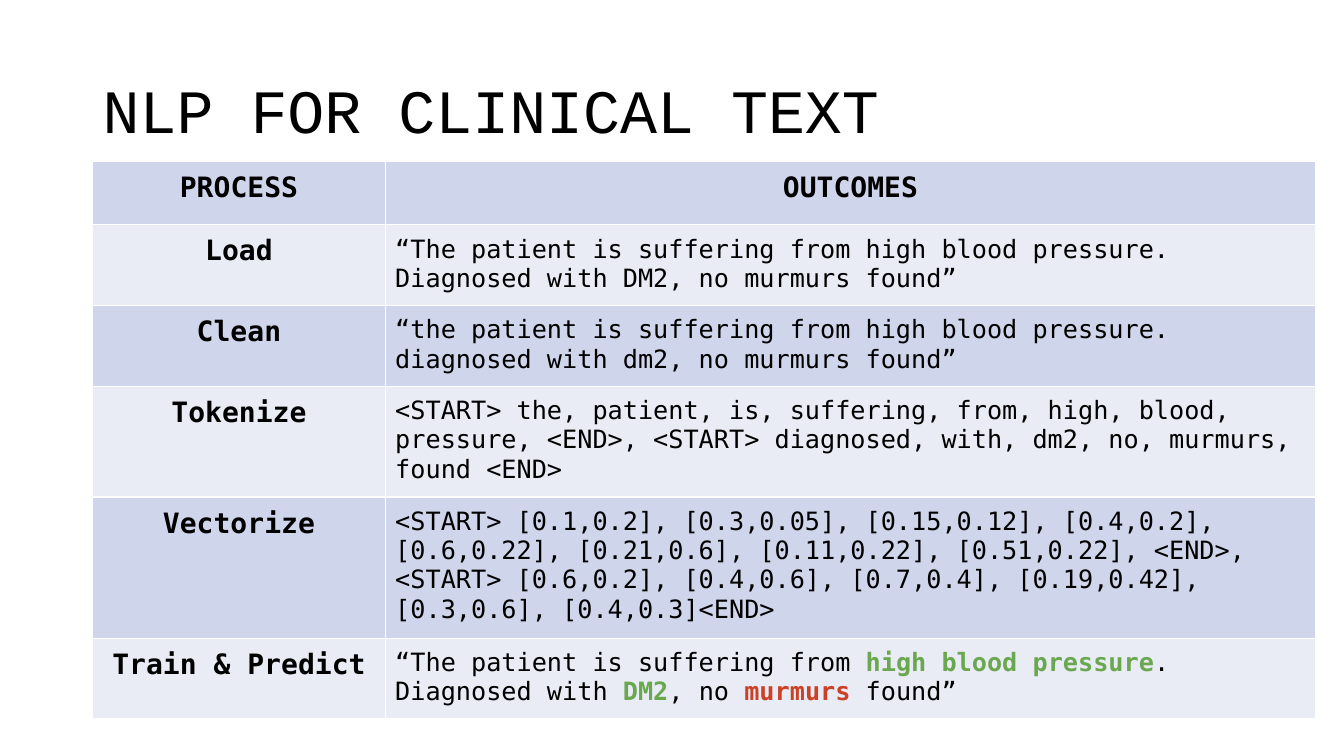
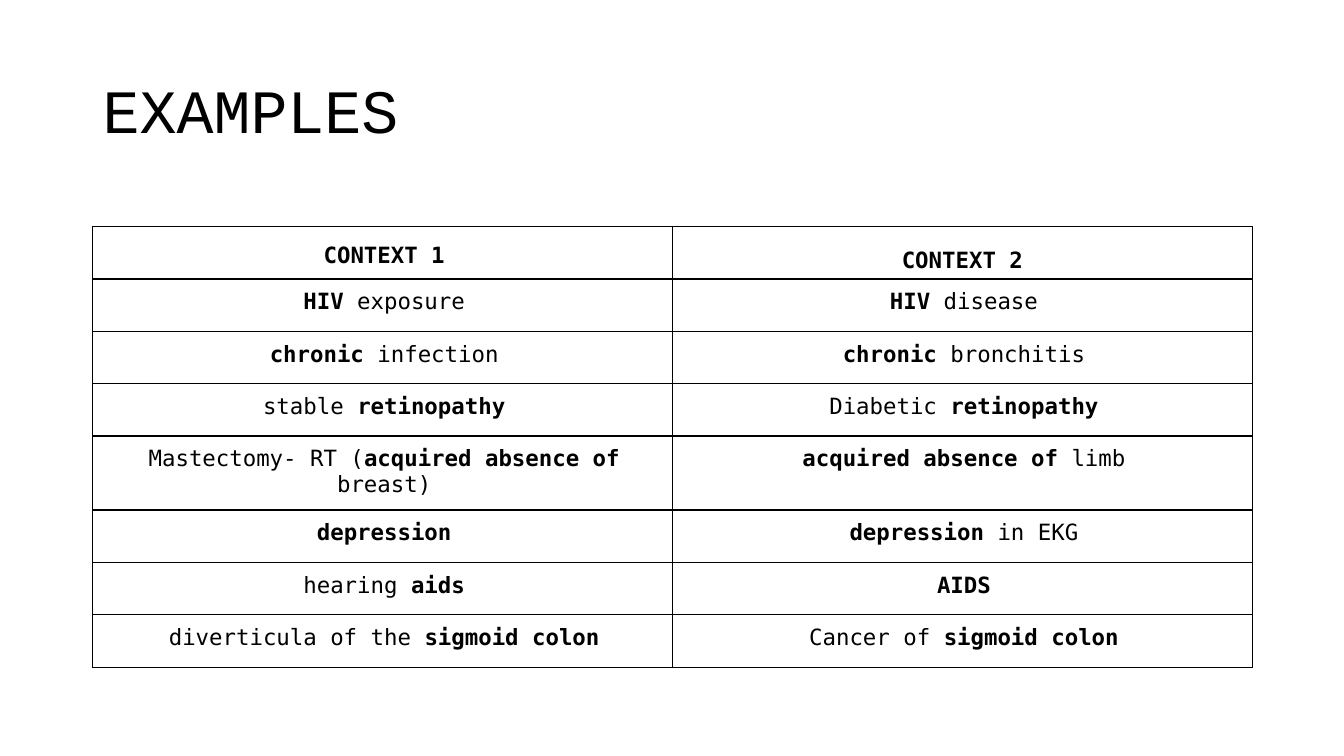
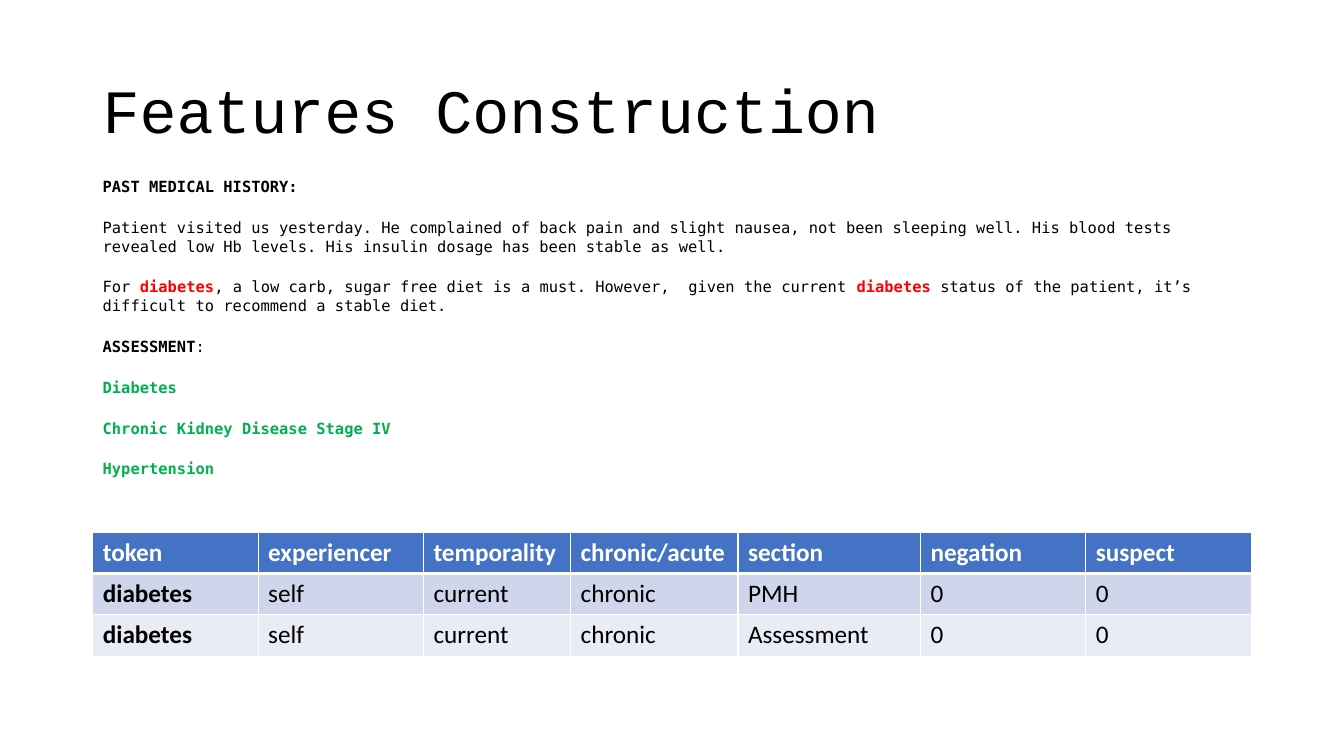
import dataclasses

import lxml.etree
import pptx
import pptx.dml.color
import pptx.enum.text
import pptx.oxml.ns
import pptx.util

Inches = pptx.util.Inches
Pt = pptx.util.Pt
Align = pptx.enum.text.PP_ALIGN
Anchor = pptx.enum.text.MSO_ANCHOR


@dataclasses.dataclass(frozen=True)
class Theme:
    black: str = "000000"
    white: str = "FFFFFF"
    header_blue: str = "4472C4"
    dark_band: str = "CFD5EA"
    light_band: str = "E9EBF5"
    found: str = "6AA84F"
    negated: str = "CC4125"
    mention: str = "FF0000"
    diagnosis: str = "00B050"
    title_font: str = "Courier New"
    text_font: str = "DejaVu Sans Mono"
    table_font: str = "Calibri"
    title_size: int = 44
    label_size: int = 20
    table_size: int = 18
    context_size: int = 16
    note_size: int = 11


THEME = Theme()


@dataclasses.dataclass(frozen=True)
class Box:
    left: float
    top: float
    width: float
    height: float

    def lengths(self):
        return [Inches(value) for value in dataclasses.astuple(self)]


@dataclasses.dataclass(frozen=True)
class Strong:
    """A bold stretch of text, optionally in its own colour."""
    text: str
    color: str = ""


@dataclasses.dataclass(frozen=True)
class CellStyle:
    """Margins run left, top, right, bottom."""
    size: int
    font: str = THEME.text_font
    color: str = THEME.black
    fill: str = ""
    align: Align = Align.LEFT
    anchor: Anchor = Anchor.TOP
    margins: tuple = (0.1, 0.1, 0.1, 0.1)
    space_before: int = 0
    border: str = THEME.white
    top_border: int = 1
    bottom_border: int = 1


TITLE_BOX = Box(0.92, 0.4, 11.5, 1.45)
PIPELINE_BOX = Box(0.92, 1.6, 12.13, 5.31)
CONTEXT_BOX = Box(0.92, 2.25, 11.5, 3.95)
NOTE_BOX = Box(0.92, 1.71, 11.5, 3.52)
FEATURE_BOX = Box(0.92, 5.28, 11.5, 1.23)

PIPELINE = [
    [[Strong("PROCESS")], [Strong("OUTCOMES")]],
    [[Strong("Load")],
     ["“The patient is suffering from high blood pressure. "
      "Diagnosed with DM2, no murmurs found”"]],
    [[Strong("Clean")],
     ["“the patient is suffering from high blood pressure. "
      "diagnosed with dm2, no murmurs found”"]],
    [[Strong("Tokenize")],
     ["<START> the, patient, is, suffering, from, high, blood, pressure, <END>, "
      "<START> diagnosed, with, dm2, no, murmurs, found <END>"]],
    [[Strong("Vectorize")],
     ["<START> [0.1,0.2], [0.3,0.05], [0.15,0.12], [0.4,0.2], [0.6,0.22], "
      "[0.21,0.6], [0.11,0.22], [0.51,0.22], <END>, <START> [0.6,0.2], "
      "[0.4,0.6], [0.7,0.4], [0.19,0.42], [0.3,0.6], [0.4,0.3]<END>"]],
    [[Strong("Train & Predict")],
     ["“The patient is suffering from ",
      Strong("high blood pressure", THEME.found), ". Diagnosed with ",
      Strong("DM2", THEME.found), ", no ",
      Strong("murmurs", THEME.negated), " found”"]],
]

CONTEXTS = [
    [[Strong("CONTEXT 1")], [Strong("CONTEXT 2")]],
    [[Strong("HIV"), " exposure"], [Strong("HIV"), " disease"]],
    [[Strong("chronic"), " infection"], [Strong("chronic"), " bronchitis"]],
    [["stable ", Strong("retinopathy")], ["Diabetic ", Strong("retinopathy")]],
    [["Mastectomy- RT (", Strong("acquired absence of"), " breast)"],
     [Strong("acquired absence of"), " limb"]],
    [[Strong("depression")], [Strong("depression "), "in EKG"]],
    [["hearing ", Strong("aids")], [Strong("AIDS")]],
    [["diverticula of the ", Strong("sigmoid colon")],
     ["Cancer of ", Strong("sigmoid colon")]],
]

NOTE = [
    [Strong("PAST MEDICAL HISTORY:")],
    ["Patient visited us yesterday. He complained of back pain and slight nausea, "
     "not been sleeping well. His blood tests revealed low Hb levels. "
     "His insulin dosage has been stable as well."],
    ["For ", Strong("diabetes", THEME.mention),
     ", a low carb, sugar free diet is a must. However,  given the current ",
     Strong("diabetes", THEME.mention),
     " status of the patient, it’s difficult to recommend a stable diet."],
    [Strong("ASSESSMENT"), ":"],
    [Strong("Diabetes", THEME.diagnosis)],
    [Strong("Chronic Kidney Disease Stage IV", THEME.diagnosis)],
    [Strong("Hypertension", THEME.diagnosis)],
]

FEATURE_NAMES = ["token", "experiencer", "temporality", "chronic/acute",
                 "section", "negation", "suspect"]
FEATURES = [[[Strong(name)] for name in FEATURE_NAMES]] + [
    [[Strong("diabetes")], ["self"], ["current"], ["chronic"], [section], ["0"], ["0"]]
    for section in ("PMH", "Assessment")
]


def rgb(color):
    return pptx.dml.color.RGBColor.from_string(color)


def write_paragraph(paragraph, parts, font, size, color):
    paragraph.font.name = font
    paragraph.font.size = Pt(size)
    paragraph.font.color.rgb = rgb(color)
    for part in parts:
        run = paragraph.add_run()
        if isinstance(part, Strong):
            run.text = part.text
            run.font.bold = True
            if part.color:
                run.font.color.rgb = rgb(part.color)
        else:
            run.text = part


def add_text(slide, box, paragraphs, font, size, anchor=Anchor.TOP, **spacing):
    """Add a text box; spacing names paragraph properties such as space_after."""
    frame = slide.shapes.add_textbox(*box.lengths()).text_frame
    frame.word_wrap = True
    frame.vertical_anchor = anchor
    for index, parts in enumerate(paragraphs):
        paragraph = frame.add_paragraph() if index else frame.paragraphs[0]
        write_paragraph(paragraph, parts, font, size, THEME.black)
        for name, value in spacing.items():
            setattr(paragraph, name, value)


def draw_borders(cell, style):
    properties = cell._tc.get_or_add_tcPr()
    widths = {"L": 1, "R": 1, "T": style.top_border, "B": style.bottom_border}
    for side, width in widths.items():
        line = lxml.etree.SubElement(
            properties, pptx.oxml.ns.qn("a:ln" + side), w=str(Pt(width)))
        fill = lxml.etree.SubElement(line, pptx.oxml.ns.qn("a:solidFill"))
        lxml.etree.SubElement(fill, pptx.oxml.ns.qn("a:srgbClr"), val=style.border)


def fill_cell(cell, parts, style):
    draw_borders(cell, style)
    if style.fill:
        cell.fill.solid()
        cell.fill.fore_color.rgb = rgb(style.fill)
    else:
        cell.fill.background()
    cell.vertical_anchor = style.anchor
    (cell.margin_left, cell.margin_top,
     cell.margin_right, cell.margin_bottom) = map(Inches, style.margins)
    paragraph = cell.text_frame.paragraphs[0]
    paragraph.alignment = style.align
    paragraph.space_before = Pt(style.space_before)
    write_paragraph(paragraph, parts, style.font, style.size, style.color)


def add_grid(slide, box, widths, heights, rows, style_for):
    """Add a table; style_for gives the CellStyle at a row and column."""
    table = slide.shapes.add_table(len(rows), len(widths), *box.lengths()).table
    table.first_row = table.horz_banding = False
    for column, width in zip(table.columns, widths):
        column.width = Inches(width)
    for row, height in zip(table.rows, heights):
        row.height = Inches(height)
    for row_index, row in enumerate(rows):
        for column_index, parts in enumerate(row):
            fill_cell(table.cell(row_index, column_index), parts,
                      style_for(row_index, column_index))


def band(row):
    return THEME.light_band if row % 2 else THEME.dark_band


def pipeline_style(row, column):
    label = row == 0 or column == 0
    return CellStyle(
        size=THEME.label_size if label else THEME.table_size,
        align=Align.CENTER if label else Align.LEFT,
        fill=band(row))


def context_style(row, column):
    second_header = row == 0 and column == 1
    return CellStyle(
        size=THEME.context_size,
        align=Align.CENTER,
        anchor=Anchor.TOP if row else Anchor.BOTTOM,
        margins=(0.1, 0.2, 0.1, 0.05) if second_header else (0.1, 0.1, 0.07, 0.1),
        space_before=2,
        border=THEME.black)


def feature_style(row, column):
    return CellStyle(
        size=THEME.table_size,
        font=THEME.table_font,
        color=THEME.black if row else THEME.white,
        fill=band(row - 1) if row else THEME.header_blue,
        margins=(0.1, 0.05, 0.1, 0.05),
        top_border=3 if row == 1 else 1,
        bottom_border=1 if row else 3)


def add_titled_slide(presentation, title):
    slide = presentation.slides.add_slide(presentation.slide_layouts[6])
    add_text(slide, TITLE_BOX, [[title]], THEME.title_font, THEME.title_size,
             Anchor.MIDDLE, line_spacing=0.9)
    return slide


def add_pipeline_slide(presentation):
    slide = add_titled_slide(presentation, "NLP FOR CLINICAL TEXT")
    label_width = 2.9
    add_grid(slide, PIPELINE_BOX, [label_width, PIPELINE_BOX.width - label_width],
             [0.63, 0.76, 0.76, 1.05, 1.35, 0.76], PIPELINE, pipeline_style)


def add_context_slide(presentation):
    slide = add_titled_slide(presentation, "EXAMPLES")
    add_grid(slide, CONTEXT_BOX, [CONTEXT_BOX.width / 2] * 2,
             [0.31] + [0.52] * (len(CONTEXTS) - 1), CONTEXTS, context_style)


def add_feature_slide(presentation):
    slide = add_titled_slide(presentation, "Features Construction")
    add_text(slide, NOTE_BOX, NOTE, THEME.text_font, THEME.note_size,
             space_after=Pt(16))
    add_grid(slide, FEATURE_BOX, [1.64, 1.64, 1.46, 1.66, 1.81, 1.64, 1.64],
             [FEATURE_BOX.height / len(FEATURES)] * len(FEATURES),
             FEATURES, feature_style)


def main():
    presentation = pptx.Presentation()
    presentation.slide_width = Inches(13.33)
    presentation.slide_height = Inches(7.5)
    add_pipeline_slide(presentation)
    add_context_slide(presentation)
    add_feature_slide(presentation)
    presentation.save("out.pptx")


if __name__ == "__main__":
    main()
